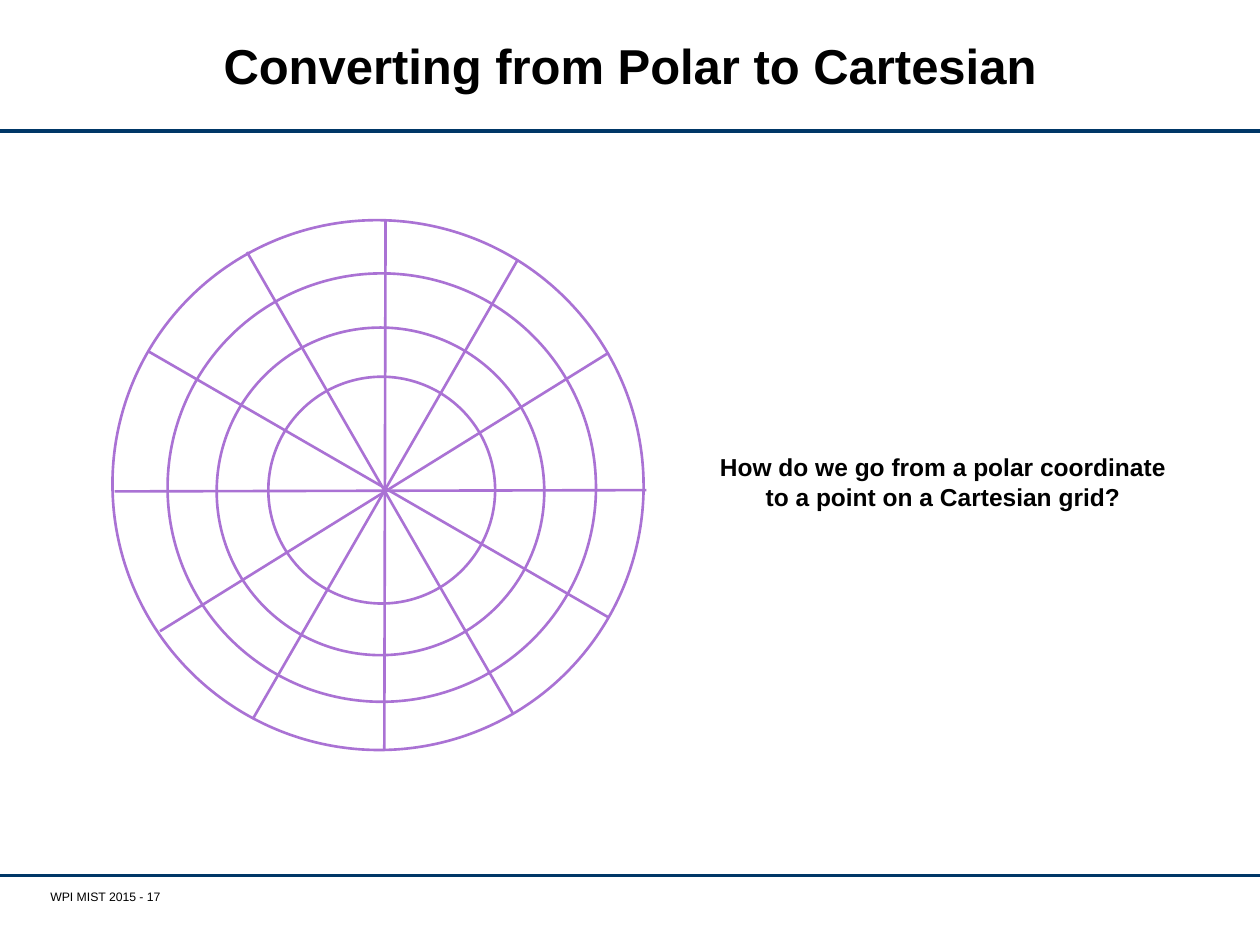
import dataclasses

import pptx
import pptx.dml.color
import pptx.enum.shapes
import pptx.enum.text
import pptx.oxml.ns
import pptx.util
from lxml import etree
from pptx.util import Inches


@dataclasses.dataclass(frozen=True)
class Theme:
    font: str = "Arial"
    text: str = "000000"
    rule: str = "003767"
    grid: str = "AA72D4"
    title_size: float = 28
    body_size: float = 14
    footer_size: float = 7
    rule_width: float = 1.75
    grid_width: float = 1.5


THEME = Theme()


def color(value):
    return pptx.dml.color.RGBColor.from_string(value)


def format_paragraph(paragraph, size, bold, alignment):
    paragraph.alignment = alignment
    paragraph.font.name = THEME.font
    paragraph.font.size = pptx.util.Pt(size)
    paragraph.font.bold = bold
    paragraph.font.color.rgb = color(THEME.text)


def add_line(shapes, start, end, line_color, width):
    line = shapes.add_connector(
        pptx.enum.shapes.MSO_CONNECTOR.STRAIGHT,
        *(Inches(value) for value in (*start, *end)),
    )
    line.line.color.rgb = color(line_color)
    line.line.width = pptx.util.Pt(width)
    properties = line._element.spPr
    etree.SubElement(properties, pptx.oxml.ns.qn("a:effectLst"))


def add_rules(slide, left, right, heights):
    for height in heights:
        add_line(slide.shapes, (left, height), (right, height), THEME.rule, THEME.rule_width)


def place_title(slide, box, text):
    title = slide.shapes.title
    title.left, title.top, title.width, title.height = (Inches(value) for value in box)
    frame = title.text_frame
    frame.text = text
    frame.vertical_anchor = pptx.enum.text.MSO_ANCHOR.MIDDLE
    frame.auto_size = pptx.enum.text.MSO_AUTO_SIZE.NONE
    paragraph = frame.paragraphs[0]
    paragraph.line_spacing = pptx.util.Pt(THEME.title_size)
    format_paragraph(paragraph, THEME.title_size, True, pptx.enum.text.PP_ALIGN.CENTER)


def add_text_box(slide, box, text):
    frame = slide.shapes.add_textbox(*(Inches(value) for value in box)).text_frame
    frame.word_wrap = True
    frame.text = text
    return frame


def add_question(slide, box, text):
    frame = add_text_box(slide, box, text)
    frame.auto_size = pptx.enum.text.MSO_AUTO_SIZE.SHAPE_TO_FIT_TEXT
    format_paragraph(
        frame.paragraphs[0], THEME.body_size, True, pptx.enum.text.PP_ALIGN.CENTER
    )


def add_footer(slide, box, text):
    frame = add_text_box(slide, box, text)
    frame.margin_left = Inches(0.05)
    frame.margin_top = frame.margin_right = frame.margin_bottom = 0
    format_paragraph(
        frame.paragraphs[0], THEME.footer_size, False, pptx.enum.text.PP_ALIGN.LEFT
    )


def add_polar_grid(slide, box):
    left, top, width, height = box
    rings = [
        (0, 0, width, height),
        (0.44, 0.42, 3.4, 3.4),
        (0.83, 0.85, 2.6, 2.6),
        (1.24, 1.24, 1.8, 1.8),
    ]
    spokes = [
        ((0.29, 1.04), (3.94, 3.15)),
        ((1.07, 0.25), (3.18, 3.91)),
        ((3.22, 0.31), (1.12, 3.95)),
        ((4.24, 2.14), (0.02, 2.15)),
        ((3.94, 1.05), (0.38, 3.26)),
        ((2.17, 0), (2.16, 4.21)),
    ]
    shapes = slide.shapes.add_group_shape().shapes
    for x, y, ring_width, ring_height in rings:
        ring = shapes.add_shape(
            pptx.enum.shapes.MSO_SHAPE.OVAL,
            Inches(left + x),
            Inches(top + y),
            Inches(ring_width),
            Inches(ring_height),
        )
        ring.rotation = 30
        ring.shadow.inherit = False
        ring.fill.background()
        ring.line.color.rgb = color(THEME.grid)
        ring.line.width = pptx.util.Pt(THEME.grid_width)
    for spoke in spokes:
        start, end = ((left + x, top + y) for x, y in spoke)
        add_line(shapes, start, end, THEME.grid, THEME.grid_width)


def main():
    presentation = pptx.Presentation()
    presentation.slide_width = Inches(10)
    presentation.slide_height = Inches(7.5)
    slide = presentation.slides.add_slide(presentation.slide_layouts[5])
    add_rules(slide, 0, 10, (1.04, 6.95))
    add_footer(slide, (0.35, 7.06, 1.45, 0.24), "WPI MIST 2015 - 17")
    place_title(slide, (1.03, 0.11, 7.94, 0.89), "Converting from Polar to Cartesian")
    add_question(
        slide,
        (5.57, 3.54, 3.83, 0.57),
        "How do we go from a polar coordinate to a point on a Cartesian grid?",
    )
    add_polar_grid(slide, (0.89, 1.75, 4.22, 4.2))
    presentation.save("out.pptx")


if __name__ == "__main__":
    main()
